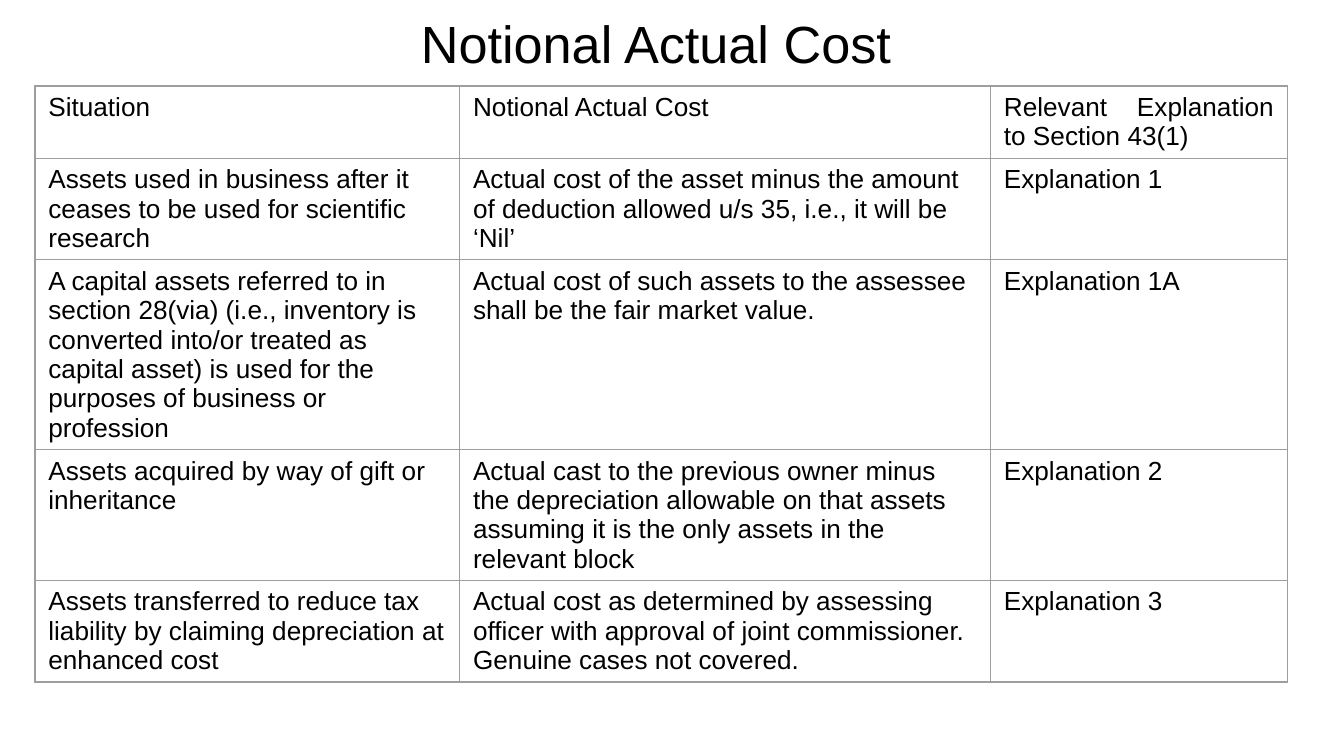
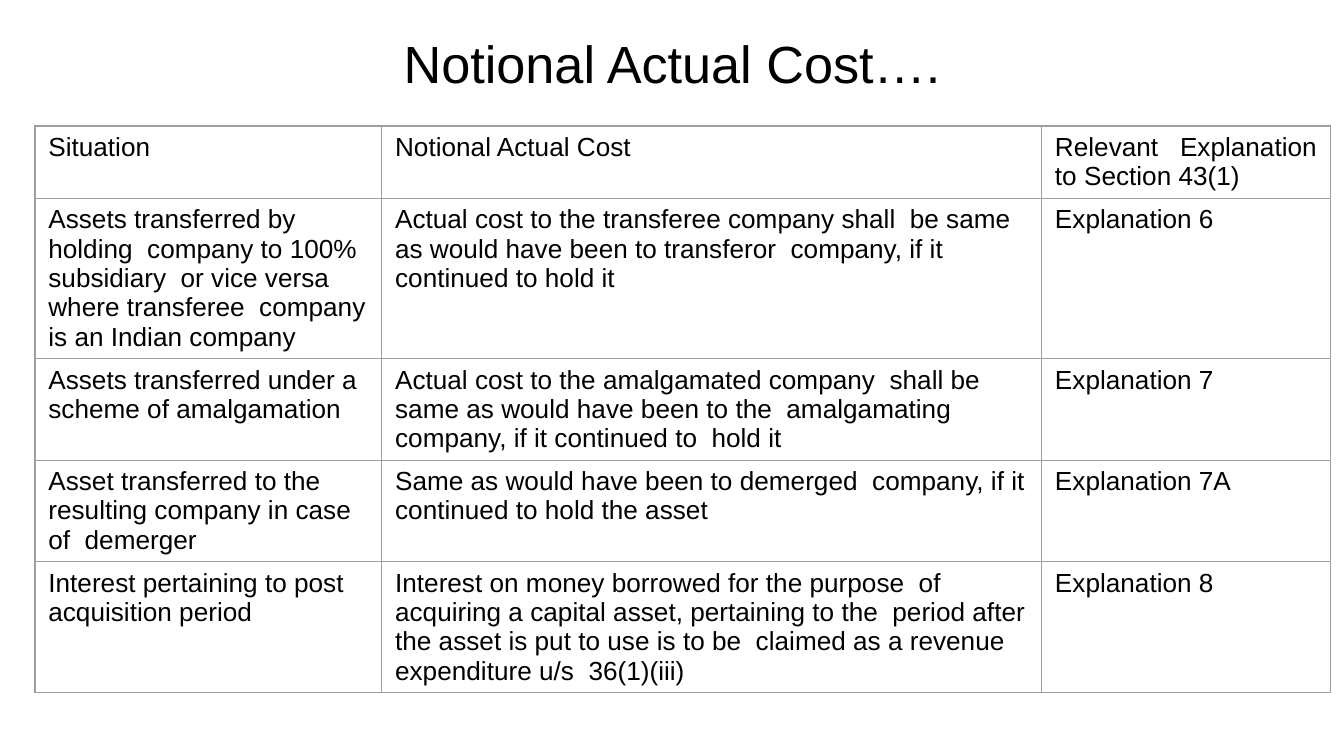
import pptx
import pptx.util
import pptx.dml.color
import pptx.enum.text
import pptx.oxml.ns
import lxml.etree

Inches = pptx.util.Inches
ALIGN = pptx.enum.text.PP_ALIGN

WIDTH = 10
HEIGHT = WIDTH * 9 / 16
TABLE_LEFT = 0.26
ROW_HEIGHT = 0.41
FONT = "Arial"
COLOURS = {"text": "000000", "grid": "9E9E9E", "page": "FFFFFF"}
HEADINGS = ("Situation", "Notional Actual Cost", "Relevant Explanation to Section 43(1)")

FIRST_RULES = [
    ("Assets used in business after it ceases to be used for scientific research",
     "Actual cost of the asset minus the amount of deduction allowed u/s 35, i.e., it will be ‘Nil’",
     "Explanation 1"),
    ("A capital assets referred to in section 28(via) (i.e., inventory is converted into/or "
     "treated as capital asset) is used for the purposes of business or profession",
     "Actual cost of such assets to the assessee shall be the fair market value.",
     "Explanation 1A"),
    ("Assets acquired by way of gift or inheritance",
     "Actual cast to the previous owner minus the depreciation allowable on that assets "
     "assuming it is the only assets in the relevant block",
     "Explanation 2"),
    ("Assets transferred to reduce tax liability by claiming depreciation at enhanced cost",
     "Actual cost as determined by assessing officer with approval of joint commissioner. "
     "Genuine cases not covered.",
     "Explanation 3"),
]

LATER_RULES = [
    ("Assets transferred by holding  company to 100% subsidiary  or vice versa where "
     "transferee  company is an Indian company",
     "Actual cost to the transferee company shall  be same as would have been to "
     "transferor  company, if it continued to hold it",
     "Explanation 6"),
    ("Assets transferred under a  scheme of amalgamation",
     "Actual cost to the amalgamated company  shall be same as would have been to the  "
     "amalgamating company, if it continued to  hold it",
     "Explanation 7"),
    ("Asset transferred to the  resulting company in case of  demerger",
     "Same as would have been to demerged  company, if it continued to hold the asset",
     "Explanation 7A"),
    ("Interest pertaining to post  acquisition period",
     "Interest on money borrowed for the purpose  of acquiring a capital asset, pertaining "
     "to the  period after the asset is put to use is to be  claimed as a revenue "
     "expenditure u/s  36(1)(iii)",
     "Explanation 8"),
]


def rgb(name):
    """Return the named colour."""
    return pptx.dml.color.RGBColor.from_string(COLOURS[name])


def write_text(frame, text, size=14, align=ALIGN.LEFT, colour="text"):
    """Fill a text frame with one formatted paragraph."""
    paragraph = frame.paragraphs[0]
    paragraph.alignment = align
    run = paragraph.add_run()
    run.text = text
    run.font.name = FONT
    run.font.size = pptx.util.Pt(size)
    run.font.bold = False
    run.font.color.rgb = rgb(colour)


def outline_cell(cell, colour="grid", points=0.75):
    """Draw the four borders of a cell, which has no fill."""
    cell.fill.background()
    properties = cell._tc.get_or_add_tcPr()
    qn = pptx.oxml.ns.qn
    for position, side in enumerate(("a:lnL", "a:lnR", "a:lnT", "a:lnB")):
        border = lxml.etree.Element(qn(side), w=str(pptx.util.Pt(points)))
        paint = lxml.etree.SubElement(border, qn("a:solidFill"))
        lxml.etree.SubElement(paint, qn("a:srgbClr"), val=COLOURS[colour])
        properties.insert(position, border)


def add_title(slide, text, left, width, height):
    """Place the centred title at the top of the slide."""
    title = slide.shapes.title
    title.left, title.top = Inches(left), 0
    title.width, title.height = Inches(width), Inches(height)
    title.text_frame.vertical_anchor = pptx.enum.text.MSO_ANCHOR.MIDDLE
    write_text(title.text_frame, text, size=28, align=ALIGN.CENTER)


def add_cost_table(slide, rules, top, widths):
    """Add the headings and the cost rules below the title."""
    rows = [HEADINGS] + rules
    frame = slide.shapes.add_table(
        len(rows), len(widths), Inches(TABLE_LEFT), Inches(top),
        Inches(sum(widths)), Inches(ROW_HEIGHT * len(rows)))
    table = frame.table
    table.first_row = table.horz_banding = False
    for column, width in zip(table.columns, widths):
        column.width = Inches(width)
    for row, texts in zip(table.rows, rows):
        row.height = Inches(ROW_HEIGHT)
        for cell, text in zip(row.cells, texts):
            justified = text == HEADINGS[-1]
            write_text(cell.text_frame, text, align=ALIGN.JUSTIFY if justified else ALIGN.LEFT)
            outline_cell(cell)


def add_cost_slide(deck, heading, rules, title_left, title_width, title_height, widths):
    """Add a slide whose table starts where its title ends."""
    slide = deck.slides.add_slide(deck.slide_layouts.get_by_name("Title Only"))
    slide.background.fill.solid()
    slide.background.fill.fore_color.rgb = rgb("page")
    add_title(slide, heading, title_left, title_width, title_height)
    add_cost_table(slide, rules, title_height, widths)


def main():
    """Build both slides and save the deck."""
    deck = pptx.Presentation()
    deck.slide_width, deck.slide_height = Inches(WIDTH), Inches(HEIGHT)
    add_cost_slide(deck, "Notional Actual Cost", FIRST_RULES, title_left=TABLE_LEFT,
                   title_width=9.24, title_height=0.64, widths=(3.16, 3.95, 2.21))
    add_cost_slide(deck, "Notional Actual Cost….", LATER_RULES, title_left=WIDTH / 20,
                   title_width=WIDTH * 0.9, title_height=HEIGHT / 6, widths=(2.58, 4.91, 2.15))
    deck.save("out.pptx")


if __name__ == "__main__":
    main()
